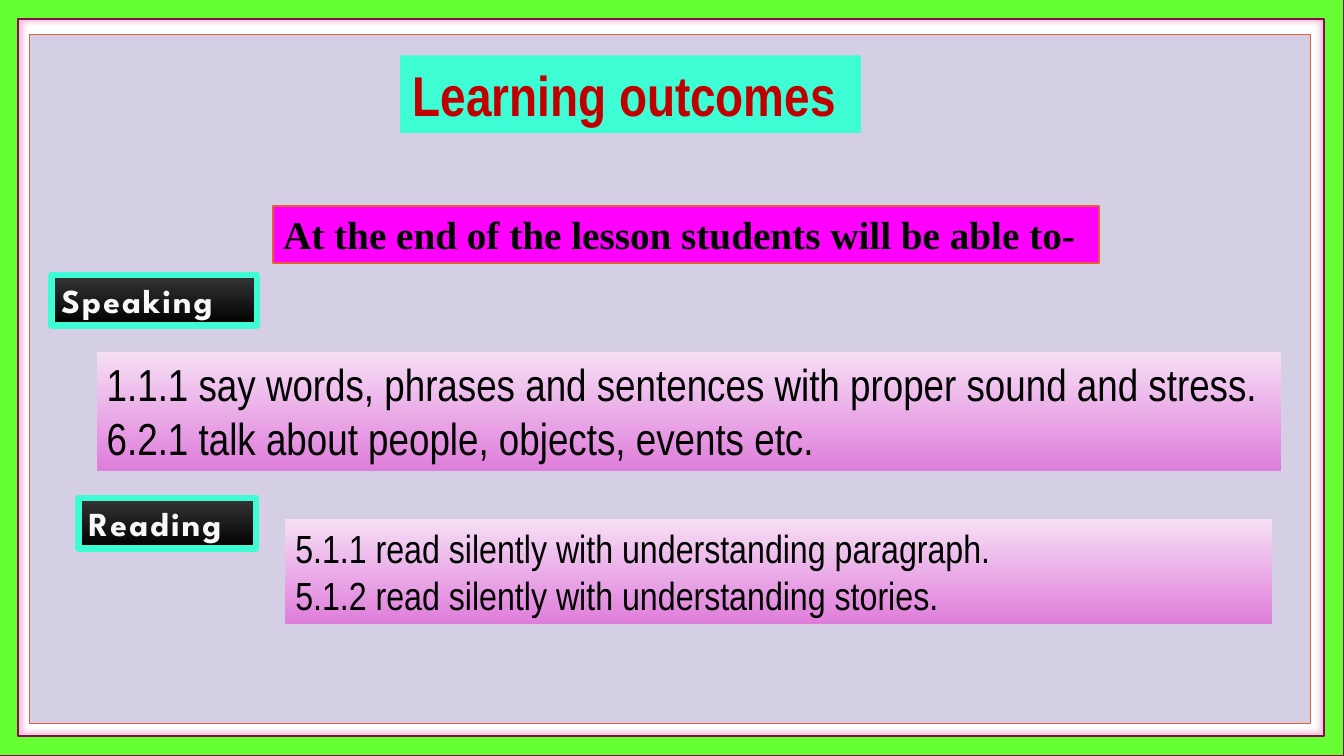
from lxml.etree import SubElement as Sub
from pptx import Presentation
from pptx.dml.color import RGBColor
from pptx.enum.shapes import MSO_SHAPE as Shape
from pptx.enum.text import MSO_ANCHOR as Anchor, MSO_AUTO_SIZE as Fit, PP_ALIGN as Align
from pptx.oxml.ns import qn
from pptx.util import Inches, Pt

WIDE, HIGH = Inches(13.33), Inches(7.5)
AQUA, ORANGE, PLUM = "3EFCD3", "E45F3C", "840D4B"
PINK, DARK = ("F6DFF5", "DF7DDB"), ("353535", "000000")


def tint(code):
    """Turn a hex string into a colour."""
    return RGBColor.from_string(code)


def paint(fill, code):
    """Fill with one colour, or with a pair of them from top to bottom."""
    if isinstance(code, str):
        fill.solid()
        fill.fore_color.rgb = tint(code)
        return
    fill.gradient()
    fill.gradient_angle = 270
    for stop, part, place in zip(fill.gradient_stops, code, (0, 1)):
        stop.color.rgb = tint(part)
        stop.position = place


def block(slide, area, fill, edge=None, width=1.5, kind=Shape.RECTANGLE):
    """Add a shape whose area is given in percent of the slide."""
    left, top, wide, high = area
    shape = slide.shapes.add_shape(
        kind, int(WIDE * left / 100), int(HIGH * top / 100),
        int(WIDE * wide / 100), int(HIGH * high / 100))
    shape.shadow.inherit = False
    paint(shape.fill, fill)
    if edge:
        shape.line.color.rgb = tint(edge)
        shape.line.width = Pt(width)
    else:
        shape.line.fill.background()
    return shape


def write(shape, *lines, size=28, face="Arial Narrow", color="000000",
          bold=False, align=Align.LEFT, wrap=True, gap=0):
    """Put lines of text into a shape, one paragraph each."""
    frame = shape.text_frame
    frame.word_wrap = wrap
    frame.auto_size = Fit.SHAPE_TO_FIT_TEXT
    frame.vertical_anchor = Anchor.TOP
    frame.text = "\n".join(lines)
    for para in frame.paragraphs:
        para.alignment = align
        for run in para.runs:
            font = run.font
            font.size, font.name, font.bold = Pt(size), face, bold
            font.color.rgb = tint(color)
            if gap:
                run._r.get_or_add_rPr().set("spc", str(int(gap * 100)))


def glow(shape, code, size, alpha):
    """Give a shape a soft glow; alpha is in percent."""
    effects = shape._element.spPr.find(qn("a:effectLst"))
    halo = Sub(effects, qn("a:glow"), rad=str(Pt(size)))
    color = Sub(halo, qn("a:srgbClr"), val=code)
    Sub(color, qn("a:alpha"), val=str(alpha * 1000))


def border(slide):
    """Draw the panel and the green frame around it."""
    block(slide, (2.18, 4.53, 95.35, 91.2), "D5CFE5", ORANGE, 0.75)
    frame = block(slide, (-0.15, -0.13, 100.15, 100.13), "66FF33", PLUM,
                  kind=Shape.FRAME)
    frame.adjustments[0] = 0.026
    glow(frame, "E45FA5", 5, 40)


def tag(slide, area, label):
    """Add a dark label for a skill."""
    write(block(slide, area, DARK, AQUA, 4.5), label, size=24,
          face="League Spartan", color="F8F8F8", bold=True, gap=1.5)


def goals(slide, area, *lines, size):
    """Add a pink box that lists outcomes."""
    write(block(slide, area, PINK), *lines, size=size)


def main():
    """Build the slide and save it."""
    deck = Presentation()
    deck.slide_width, deck.slide_height = WIDE, HIGH
    slide = deck.slides.add_slide(deck.slide_layouts[6])
    border(slide)
    write(block(slide, (20.33, 27.2, 61.44, 7.6), "FF00FF", ORANGE),
          "At the end of the lesson students will be able to-",
          face="Times New Roman", bold=True)
    write(block(slide, (29.78, 7.33, 34.28, 10.27), AQUA),
          "Learning outcomes ", size=40, color="C00000", bold=True,
          align=Align.CENTER, wrap=False)
    goals(slide, (21.23, 68.67, 73.44, 13.87),
          "5.1.1 read silently with understanding paragraph.",
          "5.1.2 read silently with understanding stories.", size=28)
    tag(slide, (5.85, 65.87, 13.2, 6.67), "Reading")
    goals(slide, (7.2, 46.53, 88.15, 15.73),
          "1.1.1 say words, phrases and sentences with proper sound and stress.",
          "6.2.1 talk about people, objects, events etc.", size=32)
    tag(slide, (3.83, 36.4, 15.3, 6.67), "Speaking")
    deck.save("out.pptx")


if __name__ == "__main__":
    main()
